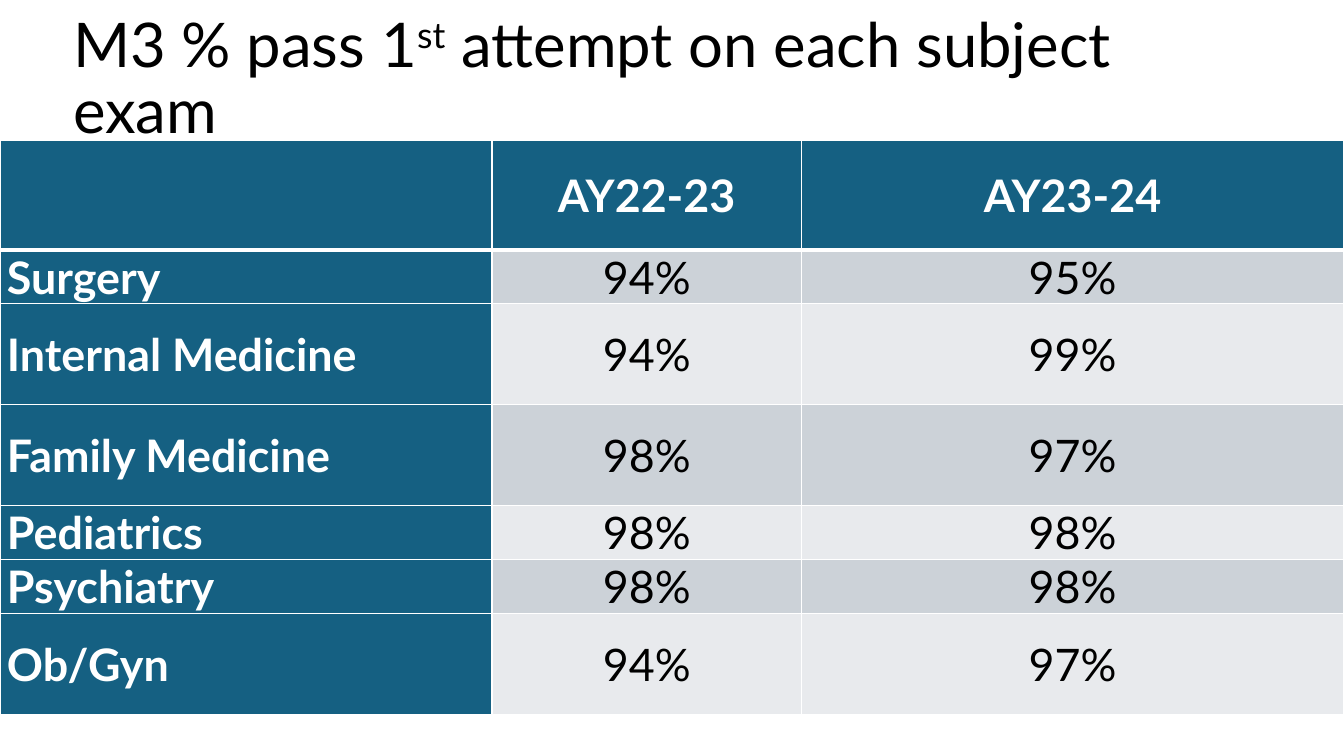
from dataclasses import dataclass

from lxml import etree
from pptx import Presentation
from pptx.dml.color import RGBColor
from pptx.enum.text import MSO_ANCHOR, MSO_AUTO_SIZE, PP_ALIGN
from pptx.oxml.ns import qn
from pptx.util import Pt

LEFT, CENTER = PP_ALIGN.LEFT, PP_ALIGN.CENTER
MIDDLE = MSO_ANCHOR.MIDDLE
NO_AUTOFIT = MSO_AUTO_SIZE.NONE
TITLE_ONLY_LAYOUT = 5


@dataclass(frozen=True)
class Theme:
    font: str = "Lato"
    title_size: int = 44
    table_size: int = 32
    black: str = "000000"
    white: str = "FFFFFF"
    heading: str = "156082"
    bands: tuple = ("CCD2D8", "E8EAED")


THEME = Theme()
COLUMN_WIDTHS = (351.5, 221, 387.5)
HEADER_HEIGHT, SHORT_ROW, TALL_ROW = 78.5, 36, 72
HEADINGS = ("", "AY22-23", "AY23-24")
PASS_RATES = (
    ("Surgery", "94%", "95%", SHORT_ROW),
    ("Internal Medicine", "94%", "99%", TALL_ROW),
    ("Family Medicine", "98%", "97%", TALL_ROW),
    ("Pediatrics", "98%", "98%", SHORT_ROW),
    ("Psychiatry", "98%", "98%", SHORT_ROW),
    ("Ob/Gyn", "94%", "97%", TALL_ROW),
)


def style_paragraph(paragraph, size, color, bold=False, alignment=LEFT):
    paragraph.alignment = alignment
    font = paragraph.font
    font.name = THEME.font
    font.size = Pt(size)
    font.bold = bold
    font.color.rgb = RGBColor.from_string(color)


def add_title(slide):
    title = slide.shapes.title
    title.left, title.top, title.width, title.height = Pt(45), Pt(5.5), Pt(828), Pt(104.4)
    frame = title.text_frame
    frame.word_wrap = True
    frame.auto_size = NO_AUTOFIT
    frame.vertical_anchor = MIDDLE
    paragraph = frame.paragraphs[0]
    paragraph.line_spacing = 0.9
    style_paragraph(paragraph, THEME.title_size, THEME.black)
    for text, baseline in (("M3 % pass 1", 0), ("st", 30000), (" attempt on each subject exam", 0)):
        run = paragraph.add_run()
        run.text = text
        if baseline:
            run.font._element.set("baseline", str(baseline))


def set_borders(cell, widths):
    properties = cell._tc.get_or_add_tcPr()
    for side, width in widths.items():
        line = etree.SubElement(properties, qn(f"a:ln{side}"), w=str(Pt(width)))
        fill = etree.SubElement(line, qn("a:solidFill"))
        etree.SubElement(fill, qn("a:srgbClr"), val=THEME.white)


def fill_cell(cell, text, row, column):
    is_heading = row == 0 or column == 0
    set_borders(cell, {"L": 1, "R": 1, "T": 3 if row == 1 else 1, "B": 3 if row == 0 else 1})
    color = THEME.heading if is_heading else THEME.bands[(row - 1) % 2]
    cell.fill.solid()
    cell.fill.fore_color.rgb = RGBColor.from_string(color)
    cell.margin_left = cell.margin_right = Pt(5)
    cell.margin_top = cell.margin_bottom = 0
    cell.vertical_anchor = MIDDLE
    cell.text = text
    style_paragraph(
        cell.text_frame.paragraphs[0],
        THEME.table_size,
        THEME.white if is_heading else THEME.black,
        bold=is_heading,
        alignment=CENTER if column else LEFT,
    )


def add_pass_rate_table(slide):
    rows = [(*HEADINGS, HEADER_HEIGHT), *PASS_RATES]
    heights = [row[-1] for row in rows]
    table = slide.shapes.add_table(
        len(rows), len(COLUMN_WIDTHS), 0, Pt(100), Pt(sum(COLUMN_WIDTHS)), Pt(sum(heights))
    ).table
    table.first_col = True
    for column, width in zip(table.columns, COLUMN_WIDTHS):
        column.width = Pt(width)
    for row_index, (*texts, height) in enumerate(rows):
        table.rows[row_index].height = Pt(height)
        for column_index, text in enumerate(texts):
            fill_cell(table.cell(row_index, column_index), text, row_index, column_index)


def main():
    presentation = Presentation()
    presentation.slide_width, presentation.slide_height = Pt(960), Pt(540)
    slide = presentation.slides.add_slide(presentation.slide_layouts[TITLE_ONLY_LAYOUT])
    add_title(slide)
    add_pass_rate_table(slide)
    presentation.save("out.pptx")


if __name__ == "__main__":
    main()
